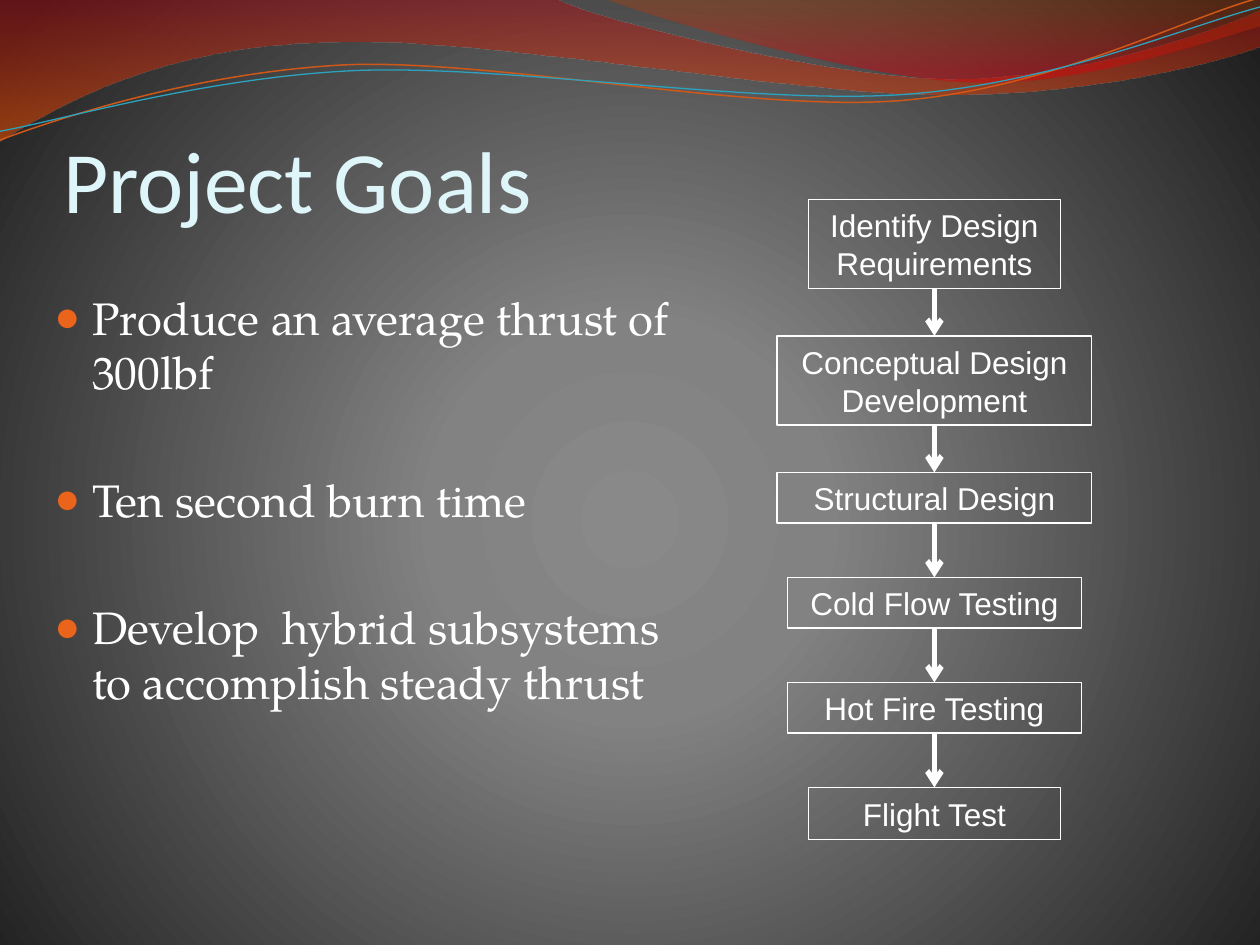
from lxml import etree
from pptx import Presentation
from pptx.dml.color import RGBColor
from pptx.enum.shapes import MSO_CONNECTOR, MSO_SHAPE
from pptx.enum.text import MSO_ANCHOR, MSO_AUTO_SIZE, PP_ALIGN
from pptx.oxml.ns import qn
from pptx.util import Pt

RECT, STRAIGHT = MSO_SHAPE.RECTANGLE, MSO_CONNECTOR.STRAIGHT
LEFT, CENTER = PP_ALIGN.LEFT, PP_ALIGN.CENTER
BOTTOM, MIDDLE = MSO_ANCHOR.BOTTOM, MSO_ANCHOR.MIDDLE
GROW = MSO_AUTO_SIZE.SHAPE_TO_FIT_TEXT
C = {"white": "FFFFFF", "title": "DEF5FA", "bullet": "EB641B",
     "orange": "CF5818", "teal": "2DA2BF",
     "bg_in": "898989", "bg_mid": "828282", "bg_out": "1F1F1F",
     "red": "AF0911", "amber": "EE5300", "rust": "C24400", "scarlet": "DC000B"}

BACKGROUND = [(0, "bg_in", 100), (25, "bg_mid", 100), (100, "bg_out", 100)]
WAVES = [
    ([(0, 0), (317, -1), (343, 12, 478, 45, 546, 45), (614, 45, 690, 19, 720, 6),
      (721, 26), (708, 32, 626, 55, 537, 54), (448, 54, 275, 20, 185, 24),
      (93, 26, 33, 60, -1, 81)], [(0, "red", 45), (100, "amber", 55)]),
    ([(345, -1), (366, 8, 491, 45, 554, 47), (616, 50, 692, 23, 720, 15), (720, 0)],
     [(0, "rust", 30), (80, "scarlet", 45)]),
]
STRANDS = [
    ([(0, 80), (35, 67, 114, 41, 199, 37), (284, 34, 427, 64, 513, 57.6),
      (600, 51, 675, 11, 719, -1)], "orange", 0.85),
    ([(0, 75), (34, 69, 118, 44, 204, 40.3), (290, 37, 430, 60, 516, 54),
      (602, 48, 678, 15, 720, 4)], "teal", 0.75),
]
GOALS = ["Produce an average thrust of 300lbf", "Ten second burn time",
         "Develop  hybrid subsystems to accomplish steady thrust"]
STEPS = [("Identify Design Requirements", 0, 144, 51),
         ("Conceptual Design Development", 78, 180, 51),
         ("Structural Design", 156, 180, 29),
         ("Cold Flow Testing", 216, 168, 29),
         ("Hot Fire Testing", 276, 168, 29),
         ("Flight Test", 336, 144, 29.9)]


def rgb(name):
    """Return the named colour."""
    return RGBColor.from_string(C[name])


def sub(parent, tag, **attrs):
    """Append a DrawingML child with the given attributes."""
    return etree.SubElement(parent, qn("a:" + tag), {k: str(v) for k, v in attrs.items()})


def apply(obj, values):
    """Set attributes from a dict of format values."""
    for name, value in values.items():
        setattr(obj, name, value)


def write(p, text, font, size, color):
    """Add one formatted run to a paragraph."""
    r = p.add_run()
    r.text = text
    apply(r.font, {"name": font, "size": Pt(size)})
    r.font.color.rgb = rgb(color)


def gradient(fill, host, stops, radial=False):
    """Fill with translucent stops, downwards or radially."""
    fill.gradient()
    grad = host.find(".//" + qn("a:gradFill"))
    for child in list(grad):
        grad.remove(child)
    stop_list = sub(grad, "gsLst")
    for pos, color, alpha in stops:
        clr = sub(sub(stop_list, "gs", pos=pos * 1000), "srgbClr", val=C[color])
        if alpha < 100:
            sub(clr, "alpha", val=alpha * 1000)
    if radial:
        sub(sub(grad, "path", path="circle"), "fillToRect", l=10000, t=110000, r=10000, b=100000)
    else:
        sub(grad, "lin", ang=5400000, scaled=0)


def outline(s, x, y, segments, close):
    """Draw a freeform of lines and cubic curves with its origin at x, y."""
    pts = [(Pt(x + seg[i]), Pt(y + seg[i + 1])) for seg in segments for i in range(0, len(seg), 2)]
    builder = s.shapes.build_freeform(*pts[0])
    builder.add_line_segments(pts[1:], close=close)
    sp = builder.convert_to_shape()
    sp.shadow.inherit = False
    lines = iter(sp._element.findall(".//" + qn("a:lnTo")))
    for seg in segments[1:]:
        first = next(lines)
        if len(seg) == 6:
            first.tag = qn("a:cubicBezTo")
            for _ in range(2):
                line = next(lines)
                first.append(line[0])
                line.getparent().remove(line)
    return sp


def add_waves(s, x, y):
    """Draw the wave bands and strands along the top."""
    for segments, stops in WAVES:
        sp = outline(s, x, y, segments, True)
        gradient(sp.fill, sp._element.spPr, stops)
        sp.line.fill.background()
    for segments, color, width in STRANDS:
        sp = outline(s, x, y, segments, False)
        sp.fill.background()
        sp.line.color.rgb = rgb(color)
        sp.line.width = Pt(width)


def add_title(s, x, y, w, h):
    """Place and format the title placeholder."""
    sp = s.shapes.title
    apply(sp, {"left": Pt(x), "top": Pt(y), "width": Pt(w), "height": Pt(h)})
    tf = sp.text_frame
    apply(tf, {"margin_left": 0, "margin_top": Pt(3.6), "margin_right": 0,
               "margin_bottom": 0, "vertical_anchor": BOTTOM})
    tf.paragraphs[0].alignment = LEFT
    write(tf.paragraphs[0], "Project Goals", "Calibri", 50, "title")


def add_goals(s, x, y, w, h):
    """Write the bulleted goals."""
    tf = s.shapes.add_textbox(Pt(x), Pt(y), Pt(w), Pt(h)).text_frame
    tf.word_wrap = True
    for i, goal in enumerate(GOALS):
        p = tf.add_paragraph() if i else tf.paragraphs[0]
        p.space_before = Pt(41.7 if i else 5.2)
        pPr = p._p.get_or_add_pPr()
        pPr.set("marL", str(Pt(21.6)))
        pPr.set("indent", str(-Pt(21.6)))
        sub(sub(pPr, "buClr"), "srgbClr", val=C["bullet"])
        sub(pPr, "buSzPct", val=95000)
        sub(pPr, "buFont", typeface="Arial")
        sub(pPr, "buChar", char="●")
        write(p, goal, "TeX Gyre Pagella", 26, "white")


def add_arrow(s, start, end):
    """Join two steps with a downward arrow."""
    cx = s.shapes.add_connector(STRAIGHT, 0, 0, 0, 0)
    cx.begin_connect(start, 2)
    cx.end_connect(end, 0)
    cx.line.color.rgb = rgb("white")
    cx.line.width = Pt(3)
    sub(cx.line._get_or_add_ln(), "tailEnd", type="arrow")
    sub(cx._element.spPr, "effectLst")


def add_flow(s, x, y, w):
    """Stack the project steps, centred in the column."""
    last = None
    for text, top, width, height in STEPS:
        sp = s.shapes.add_shape(RECT, Pt(x + (w - width) / 2), Pt(y + top), Pt(width), Pt(height))
        sp.shadow.inherit = False
        sp.fill.background()
        sp.line.color.rgb = rgb("white")
        sp.line.width = Pt(0.75)
        tf = sp.text_frame
        apply(tf, {"word_wrap": True, "auto_size": GROW, "vertical_anchor": MIDDLE})
        tf.paragraphs[0].alignment = CENTER
        write(tf.paragraphs[0], text, "Arial", 18, "white")
        if last is not None:
            add_arrow(s, last, sp)
        last = sp


def main():
    """Build and save the slide."""
    prs = Presentation()
    prs.slide_width, prs.slide_height = Pt(720), Pt(540)
    s = prs.slides.add_slide(prs.slide_layouts[5])
    gradient(s.background.fill, s._element, BACKGROUND, radial=True)
    add_waves(s, 0, 0)
    add_title(s, 36, 42, 648, 90)
    add_goals(s, 24, 162, 384, 345.6)
    add_flow(s, 443.95, 113.95, 180)
    prs.save("out.pptx")


if __name__ == "__main__":
    main()
